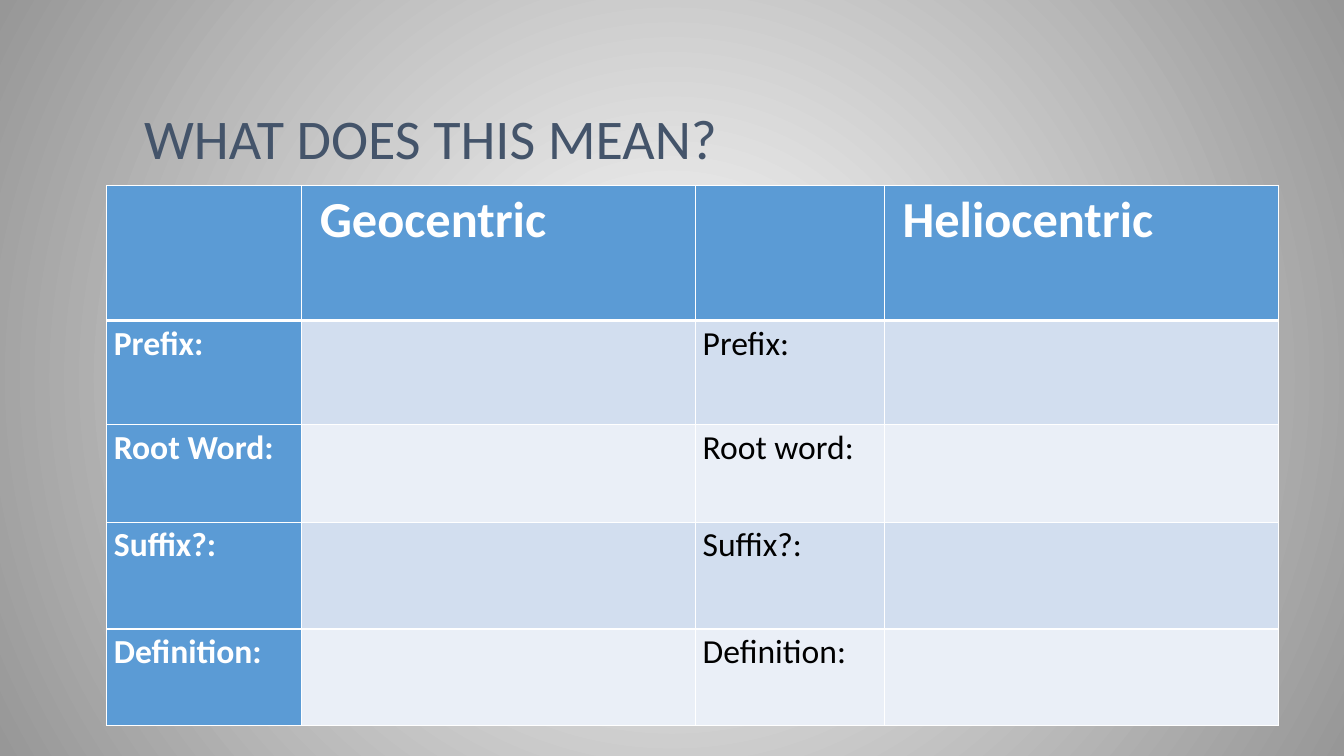
from dataclasses import dataclass

from lxml.etree import SubElement
from pptx import Presentation
from pptx.dml.color import RGBColor
from pptx.enum.text import MSO_ANCHOR, PP_ALIGN
from pptx.oxml import parse_xml
from pptx.oxml.ns import nsdecls, qn
from pptx.slide import Slide
from pptx.table import _Cell
from pptx.text.text import _Paragraph
from pptx.util import Inches, Pt

COLOURS = {
    "white": "FFFFFF",
    "black": "000000",
    "edge": "979797",
    "title": "44546A",
    "accent": "5B9BD5",
    "odd_band": "D2DEEF",
    "even_band": "EAEFF7",
}
FONT = "Calibri"
COLUMN_WIDTHS = [1.93, 3.91, 1.87, 3.91]


@dataclass(frozen=True)
class TextStyle:
    """Look of one run of text."""

    size: int
    colour: str
    bold: bool = False


@dataclass(frozen=True)
class TableRow:
    """Height and wording of one table row."""

    height: float
    texts: tuple[str, str, str, str]


TITLE = TextStyle(40, "title")
HEADING = TextStyle(36, "white", True)
ROW_LABEL = TextStyle(24, "white", True)
BODY = TextStyle(24, "black")

ROWS = [
    TableRow(1.34, ("", " Geocentric", "", " Heliocentric")),
    TableRow(1.03, ("Prefix:", "", "Prefix:", "")),
    TableRow(0.97, ("Root Word:", "", "Root word:", "")),
    TableRow(1.06, ("Suffix?:", "", "Suffix?:", "")),
    TableRow(0.96, ("Definition:", "", "Definition:", "")),
]


def rgb(name: str) -> RGBColor:
    """Return the named colour."""
    return RGBColor.from_string(COLOURS[name])


def add_span(para: _Paragraph, text: str, style: TextStyle, spacing: float) -> None:
    """Add one styled run to a left-aligned paragraph."""
    para.alignment = PP_ALIGN.LEFT
    para.line_spacing = spacing
    span = para.add_run()
    span.text = text
    span.font.name = FONT
    span.font.size = Pt(style.size)
    span.font.bold = style.bold
    span.font.color.rgb = rgb(style.colour)


def paint_background(slide: Slide) -> None:
    """Fill the slide with a circular gradient from its centre."""
    fill = slide.background.fill
    fill.gradient()
    for stop, name in zip(fill.gradient_stops, ("white", "edge")):
        stop.color.rgb = rgb(name)
    gradient = next(slide.element.iter(qn("a:gradFill")))
    gradient.remove(gradient.find(qn("a:lin")))
    circle = SubElement(gradient, qn("a:path"), {"path": "circle"})
    SubElement(circle, qn("a:fillToRect"), dict.fromkeys("ltrb", "50000"))


def add_title(slide: Slide) -> None:
    """Place and format the slide title."""
    title = slide.shapes.title
    title.left, title.top = Inches(1.33), Inches(0.3)
    title.width, title.height = Inches(10.67), Inches(1.45)
    title.text_frame.vertical_anchor = MSO_ANCHOR.BOTTOM
    add_span(title.text_frame.paragraphs[0], "WHAT DOES THIS MEAN?", TITLE, 0.9)


def set_borders(cell: _Cell, top: int, bottom: int) -> None:
    """Give a cell white borders, with widths in points."""
    properties = cell._tc.get_or_add_tcPr()
    widths = {"lnL": 1, "lnR": 1, "lnT": top, "lnB": bottom}
    for position, (side, width) in enumerate(widths.items()):
        line = parse_xml(
            f'<a:{side} {nsdecls("a")} w="{Pt(width)}"><a:solidFill>'
            f'<a:srgbClr val="{COLOURS["white"]}"/></a:solidFill></a:{side}>'
        )
        properties.insert(position, line)


def format_cell(cell: _Cell, row: int, column: int, text: str) -> None:
    """Fill, border and write one cell according to its place."""
    accented = row == 0 or column == 0
    band = "odd_band" if row % 2 else "even_band"
    cell.fill.solid()
    cell.fill.fore_color.rgb = rgb("accent" if accented else band)
    set_borders(cell, 3 if row == 1 else 1, 3 if row == 0 else 1)
    if text:
        cell.margin_left = cell.margin_right = Inches(0.07)
        cell.margin_top = cell.margin_bottom = 0
        style = HEADING if row == 0 else ROW_LABEL if column == 0 else BODY
        add_span(cell.text_frame.paragraphs[0], text, style, 1.07)


def add_word_table(slide: Slide) -> None:
    """Draw the table that splits both words into parts."""
    table = slide.shapes.add_table(
        len(ROWS), len(COLUMN_WIDTHS),
        Inches(1.06), Inches(1.84), Inches(11.62), Inches(5.36),
    ).table
    for column, width in zip(table.columns, COLUMN_WIDTHS):
        column.width = Inches(width)
    for row_index, row in enumerate(ROWS):
        table.rows[row_index].height = Inches(row.height)
        for column_index, text in enumerate(row.texts):
            cell = table.cell(row_index, column_index)
            format_cell(cell, row_index, column_index, text)


def main() -> None:
    """Build and save the deck."""
    deck = Presentation()
    deck.slide_width, deck.slide_height = Inches(13.33), Inches(7.5)
    page = deck.slides.add_slide(deck.slide_layouts[5])
    paint_background(page)
    add_title(page)
    add_word_table(page)
    deck.save("out.pptx")


if __name__ == "__main__":
    main()
